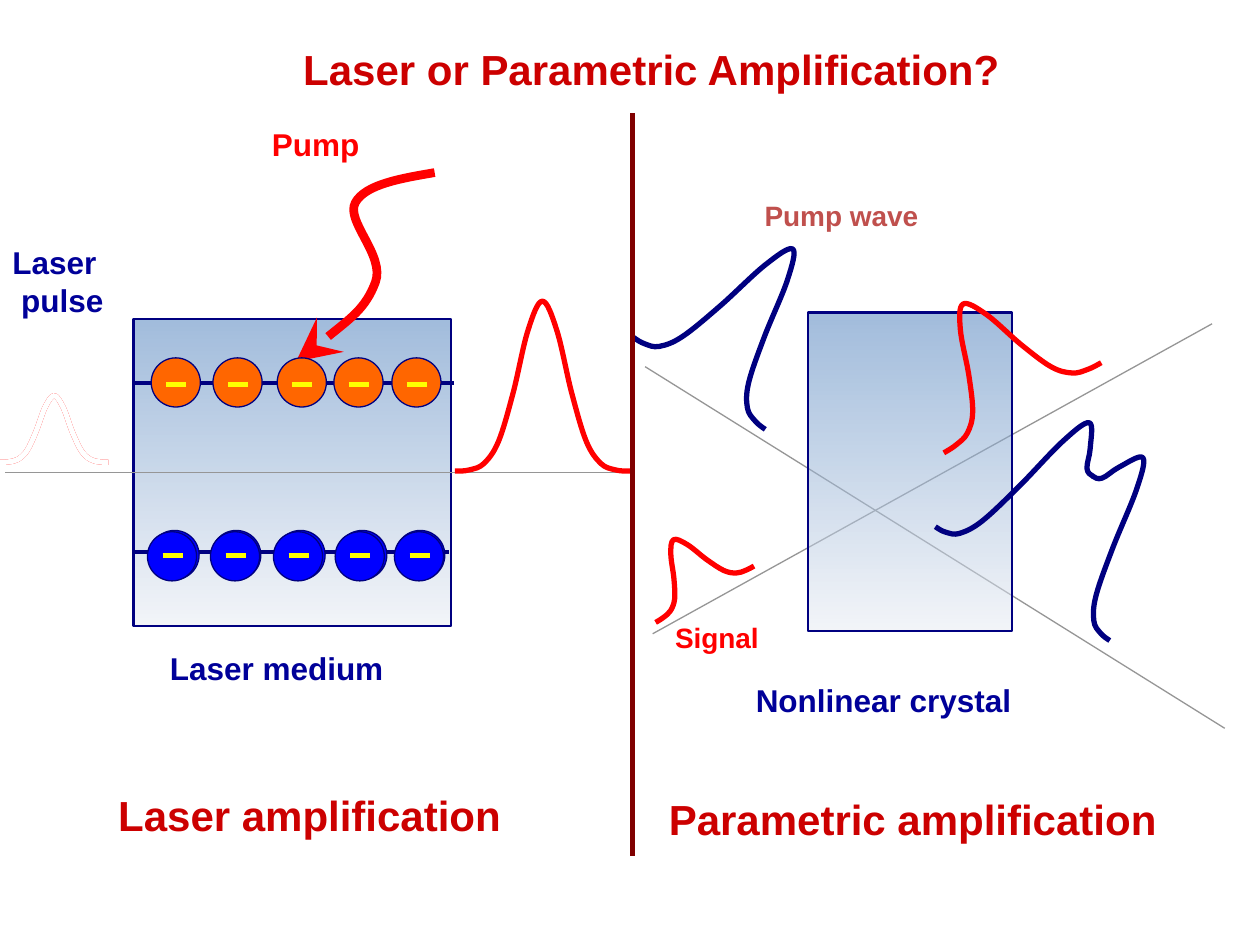
import dataclasses
import math
import typing

import lxml.etree
import pptx
import pptx.dml.color
import pptx.enum.shapes
import pptx.enum.text
import pptx.oxml.ns
import pptx.util

Inches = pptx.util.Inches
qn = pptx.oxml.ns.qn
Points = list[tuple[float, float]]

RED, NAVY, GREY, BLUE, CRIMSON = "FF0000", "000080", "969696", "000099", "CC0000"
DISC = 0.39
DASH_START, DASH_END = 0.12, 0.28
BELL_STEPS = 12
BELL_SPREAD = 0.19
DEPLETED_PEAK = 0.69
DEPLETED_VALLEY = [(0.83, 0.12), (0.91, 0.23), (1, 0.25)]
PUMP_BENDS = [(3.45, 1.37), (2.82, 1.61), (2.98, 2.24), (2.35, 2.87)]


@dataclasses.dataclass
class Box:
    left: float
    top: float
    width: float
    height: float


@dataclasses.dataclass
class Label:
    lines: list[str]
    box: Box
    size: int
    color: str


@dataclasses.dataclass
class Line:
    start: tuple[float, float]
    end: tuple[float, float]
    color: str
    weight: float


@dataclasses.dataclass
class Wave:
    profile: Points
    box: Box
    color: str = RED
    rotation: float = 0


@dataclasses.dataclass
class ElectronRow:
    lefts: list[float]
    top: float
    dash: float
    color: str


def bell_profile() -> Points:
    steps = [index / BELL_STEPS for index in range(BELL_STEPS + 1)]
    return [(x, 1 - math.exp(-(((x - 0.5) / BELL_SPREAD) ** 2))) for x in steps]


def depleted_profile() -> Points:
    rise = bell_profile()[:BELL_STEPS // 2 + 1]
    return [(x * DEPLETED_PEAK / 0.5, y) for x, y in rise] + DEPLETED_VALLEY


def mirrored(profile: Points) -> Points:
    return [(1 - x, y) for x, y in reversed(profile)]


BELL = bell_profile()
DEPLETED = depleted_profile()

LABELS = [
    Label(["Laser medium"], Box(1.25, 5.1, 1.9, 0.4), 18, BLUE),
    Label(["Pump"], Box(2.06, 0.94, 0.9, 0.4), 18, RED),
    Label(["Laser", " pulse"], Box(0, 1.88, 0.92, 0.7), 18, BLUE),
    Label(["Pump wave"], Box(5.97, 1.53, 1.42, 0.37), 16, "C0504D"),
    Label(["Signal"], Box(5.26, 4.88, 0.87, 0.37), 16, RED),
    Label(["Nonlinear crystal"], Box(5.9, 5.36, 2.23, 0.4), 18, BLUE),
    Label(["Laser amplification"], Box(0.84, 6.22, 3.24, 0.5), 24, CRIMSON),
    Label(["Parametric amplification"], Box(5.21, 6.25, 4.07, 0.5), 24, CRIMSON),
]
LASER_MEDIUM = Box(1.06, 2.53, 2.52, 2.44)
CRYSTAL = Box(6.41, 2.48, 1.62, 2.53)
BEAM_AND_LEVELS = [
    Line((5, 3.75), (0.04, 3.75), GREY, 0.75),
    Line((3.56, 4.38), (1.06, 4.38), NAVY, 2.5),
    Line((3.6, 3.04), (1.06, 3.04), NAVY, 2.5),
]
CROSSED_BEAMS = [
    Line((9.72, 5.78), (5.12, 2.91), GREY, 0.75),
    Line((5.18, 5.03), (9.62, 2.57), GREY, 0.75),
]
DIVIDER = Line((5.02, 0.9), (5.02, 6.79), "800000", 3)
ELECTRON_ROWS = [
    ElectronRow([1.19, 1.68, 2.19, 2.68, 3.14], 4.21, 0.19, "0000FF"),
    ElectronRow([1.17, 1.67, 2.17, 2.66, 3.13], 4.22, 0.19, "0000FF"),
    ElectronRow([1.2, 1.69, 2.2, 2.65, 3.11], 2.84, 0.21, "FF6600"),
]
AMPLIFIED_PULSE = Wave(BELL, Box(3.61, 2.39, 1.39, 1.35))
INPUT_PULSES = [Wave(BELL, Box(0, 3.14, 0.86, 0.53), color) for color in (RED, "FFFFFF")]
SIGNAL_IN = Wave(BELL, Box(5.02, 4.25, 0.9, 0.5), RED, 330.2)
PUMP_IN = Wave(BELL, Box(5.28, 1.86, 1.28, 1.3), NAVY, 34.9)
SIGNAL_OUT = Wave(BELL, Box(7.16, 2.35, 1.44, 0.95), RED, 330.2)
PUMP_OUT = [
    Wave(DEPLETED, Box(7.73, 3.16, 0.83, 1.36), NAVY, 33.1),
    Wave(mirrored(DEPLETED), Box(8.42, 3.61, 0.83, 1.36), NAVY, 33.1),
]


def rgb(value: str) -> pptx.dml.color.RGBColor:
    return pptx.dml.color.RGBColor.from_string(value)


def lengths(box: Box) -> list[int]:
    return [Inches(value) for value in dataclasses.astuple(box)]


def set_line(shape: typing.Any, color: str, weight: float) -> None:
    shape.line.color.rgb = rgb(color)
    shape.line.width = pptx.util.Pt(weight)


def write(frame: typing.Any, lines: list[str], size: int, color: str) -> None:
    formats = {"name": "Arial", "size": pptx.util.Pt(size), "bold": True}
    for index, line in enumerate(lines):
        para = frame.add_paragraph() if index else frame.paragraphs[0]
        span = para.add_run()
        span.text = line
        span.font.color.rgb = rgb(color)
        for name, value in formats.items():
            setattr(span.font, name, value)


def add_title(title: typing.Any, text: str, box: Box) -> None:
    for name, value in dataclasses.asdict(box).items():
        setattr(title, name, Inches(value))
    title.text_frame.vertical_anchor = pptx.enum.text.MSO_ANCHOR.MIDDLE
    write(title.text_frame, [text], 24, CRIMSON)
    title.text_frame.paragraphs[0].alignment = pptx.enum.text.PP_ALIGN.CENTER


def add_label(shapes: typing.Any, label: Label) -> None:
    box = shapes.add_textbox(*lengths(label.box))
    box.text_frame.word_wrap = False
    box.text_frame.auto_size = pptx.enum.text.MSO_AUTO_SIZE.SHAPE_TO_FIT_TEXT
    write(box.text_frame, label.lines, label.size, label.color)


def add_line(shapes: typing.Any, line: Line) -> None:
    straight = pptx.enum.shapes.MSO_CONNECTOR.STRAIGHT
    connector = shapes.add_connector(straight, *map(Inches, line.start + line.end))
    set_line(connector, line.color, line.weight)
    lxml.etree.SubElement(connector.element.spPr, qn("a:effectLst"))


def bezier_points(anchors: Points) -> Points:
    handles = []
    for (x0, y0), (x, y), (x1, y1) in zip(anchors, anchors[1:], anchors[2:]):
        dx, dy = (x1 - x0) / 6, (y1 - y0) / 6
        handles += [(x - dx, y - dy), (x, y), (x + dx, y + dy)]
    first, last = (
        ((end[0] + near[0]) / 2, (end[1] + near[1]) / 2)
        for end, near in ((anchors[0], handles[0]), (anchors[-1], handles[-1]))
    )
    return [anchors[0], first, *handles, last, anchors[-1]]


def add_curve(shapes: typing.Any, anchors: Points, color: str, weight: float) -> typing.Any:
    start, *rest = [(Inches(x), Inches(y)) for x, y in bezier_points(anchors)]
    builder = shapes.build_freeform(*start)
    builder.add_line_segments(rest, close=False)
    shape = builder.convert_to_shape()
    shape.shadow.inherit = False
    shape.fill.background()
    set_line(shape, color, weight)
    outline = shape.element.find(".//" + qn("a:path"))
    segments = outline.findall(qn("a:lnTo"))
    for index in range(0, len(segments), 3):
        curve = lxml.etree.SubElement(outline, qn("a:cubicBezTo"))
        for segment in segments[index:index + 3]:
            curve.append(segment[0])
            outline.remove(segment)
    return shape


def add_wave(shapes: typing.Any, wave: Wave) -> None:
    box = wave.box
    anchors = [(box.left + x * box.width, box.top + y * box.height) for x, y in wave.profile]
    add_curve(shapes, anchors, wave.color, 3).rotation = wave.rotation


def add_pump_arrow(shapes: typing.Any) -> None:
    arrow = add_curve(shapes, PUMP_BENDS, RED, 5)
    line = arrow.element.spPr.find(qn("a:ln"))
    lxml.etree.SubElement(line, qn("a:tailEnd"), type="stealth", w="lg", len="lg")


def add_block(shapes: typing.Any, box: Box) -> None:
    block = shapes.add_shape(pptx.enum.shapes.MSO_SHAPE.RECTANGLE, *lengths(box))
    block.shadow.inherit = False
    block.fill.gradient()
    block.fill.gradient_angle = 270
    for stop, position, color in zip(block.fill.gradient_stops, (0, 1), ("4F81BD", "E8ECF3")):
        stop.position = position
        stop.color.rgb = rgb(color)
    for color in block.element.spPr.iter(qn("a:srgbClr")):
        lxml.etree.SubElement(color, qn("a:alpha"), val="53000")
    set_line(block, NAVY, 1.25)


def add_electrons(shapes: typing.Any, row: ElectronRow) -> None:
    group = shapes.add_group_shape().shapes
    oval = pptx.enum.shapes.MSO_SHAPE.OVAL
    y = row.top + row.dash
    for left in row.lefts:
        disc = group.add_shape(oval, *lengths(Box(left, row.top, DISC, DISC)))
        disc.shadow.inherit = False
        disc.fill.solid()
        disc.fill.fore_color.rgb = rgb(row.color)
        set_line(disc, NAVY, 0.75)
        add_line(group, Line((left + DASH_START, y), (left + DASH_END, y), "FFFF00", 3))


def draw_all(shapes: typing.Any, draw: typing.Callable, items: list) -> None:
    for item in items:
        draw(shapes, item)


def main() -> None:
    deck = pptx.Presentation()
    deck.slide_width, deck.slide_height = Inches(10), Inches(7.5)
    page = deck.slides.add_slide(deck.slide_layouts[5])
    shapes = page.shapes
    add_title(shapes.title, "Laser or Parametric Amplification?", Box(0.67, -0.08, 9, 1.25))

    add_block(shapes, LASER_MEDIUM)
    draw_all(shapes, add_line, BEAM_AND_LEVELS)
    add_pump_arrow(shapes)
    draw_all(shapes, add_electrons, ELECTRON_ROWS)
    draw_all(shapes, add_wave, [AMPLIFIED_PULSE, *INPUT_PULSES])

    draw_all(shapes, add_line, CROSSED_BEAMS)
    draw_all(shapes, add_wave, [SIGNAL_IN, PUMP_IN])
    add_block(shapes, CRYSTAL)
    add_wave(shapes, SIGNAL_OUT)
    draw_all(shapes.add_group_shape().shapes, add_wave, PUMP_OUT)

    add_line(shapes, DIVIDER)
    draw_all(shapes, add_label, LABELS)
    deck.save("out.pptx")


if __name__ == "__main__":
    main()
